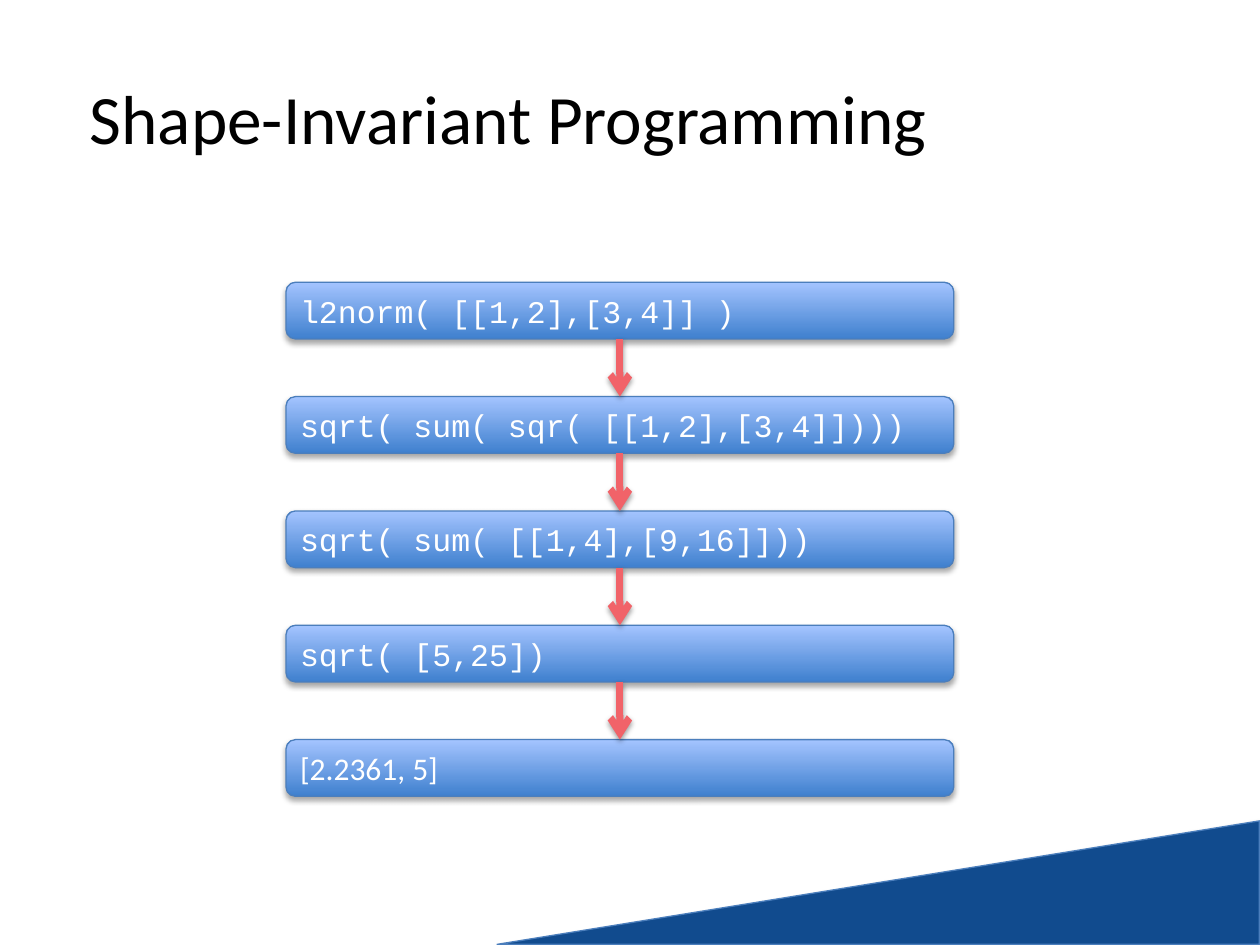
"""Build a slide tracing a shape-invariant evaluation step by step."""
from dataclasses import dataclass

import pptx
import pptx.util
import pptx.dml.color
import pptx.enum.dml
import pptx.enum.shapes
import pptx.enum.text
import pptx.oxml
import pptx.oxml.ns
from pptx.util import Inches

RGB = pptx.dml.color.RGBColor.from_string
SHAPE = pptx.enum.shapes.MSO_SHAPE


@dataclass(frozen=True)
class Theme:
    """Colours, fonts and sizes in points."""
    title: str = "000000"
    wedge: str = "114B8E"
    outline: str = "4B7EBC"
    step_bottom: str = "3F80CE"
    step_top: str = "A4C4FF"
    step_text: str = "FFFFFF"
    arrow: str = "F16369"
    shadow: str = "000000"
    body_font: str = "Calibri"
    code_font: str = "Courier New"
    title_size: float = 39.6
    step_size: float = 18
    outline_width: float = 0.75
    arrow_width: float = 4


THEME = Theme()


@dataclass(frozen=True)
class Step:
    """One expression in the evaluation chain."""
    expression: str
    font: str = THEME.code_font


STEPS = [
    Step("l2norm( [[1,2],[3,4]] )"),
    Step("sqrt( sum( sqr( [[1,2],[3,4]])))"),
    Step("sqrt( sum( [[1,4],[9,16]]))"),
    Step("sqrt( [5,25])"),
    Step("[2.2361, 5]", THEME.body_font),
]
STEP_LEFT, STEP_WIDTH, STEP_HEIGHT = 2.27, 5.3, 0.45
FIRST_TOP, LAST_TOP = 2.24, 5.87
PITCH = (LAST_TOP - FIRST_TOP) / (len(STEPS) - 1)


def add_shadow(target, opacity: int, distance: float) -> None:
    """Give a shape or connector a soft shadow falling straight down."""
    blur, offset = pptx.util.Pt(3.1), pptx.util.Pt(distance)
    target.element.spPr.append(pptx.oxml.parse_xml(
        f'<a:effectLst {pptx.oxml.ns.nsdecls("a")}>'
        f'<a:outerShdw blurRad="{blur}" dist="{offset}" dir="5400000" rotWithShape="0">'
        f'<a:srgbClr val="{THEME.shadow}"><a:alpha val="{opacity * 1000}"/></a:srgbClr>'
        '</a:outerShdw></a:effectLst>'))


def set_line(target, colour: str, width: float) -> None:
    """Set line colour and width."""
    target.line.color.rgb = RGB(colour)
    target.line.width = pptx.util.Pt(width)


def add_text(paragraph, text: str, font: str, size: float, colour: str) -> None:
    """Add one formatted run."""
    run = paragraph.add_run()
    run.text = text
    run.font.name = font
    run.font.size = pptx.util.Pt(size)
    run.font.color.rgb = RGB(colour)


def add_wedge(slide) -> None:
    """Draw the corner wedge."""
    wedge = slide.shapes.add_shape(
        SHAPE.RIGHT_TRIANGLE, Inches(6.48), Inches(3.98), Inches(0.98), Inches(6.05))
    wedge.rotation = 270
    wedge.fill.solid()
    wedge.fill.fore_color.rgb = RGB(THEME.wedge)
    set_line(wedge, THEME.outline, THEME.outline_width)
    add_shadow(wedge, 35, 1.8)


def set_title(slide, text: str) -> None:
    """Place and fill the title."""
    title = slide.shapes.title
    title.left, title.top = Inches(0.5), Inches(0.3)
    title.width, title.height = Inches(7.07), Inches(1.25)
    frame = title.text_frame
    frame.auto_size = pptx.enum.text.MSO_AUTO_SIZE.NONE
    frame.vertical_anchor = pptx.enum.text.MSO_ANCHOR.MIDDLE
    frame.paragraphs[0].alignment = pptx.enum.text.PP_ALIGN.CENTER
    add_text(frame.paragraphs[0], text, THEME.body_font, THEME.title_size, THEME.title)


def add_step(slide, step: Step, top: float):
    """Draw one expression box and return it."""
    box = slide.shapes.add_shape(
        SHAPE.ROUNDED_RECTANGLE, Inches(STEP_LEFT), Inches(top),
        Inches(STEP_WIDTH), Inches(STEP_HEIGHT))
    box.fill.gradient()
    box.fill.gradient_angle = 90
    for stop, colour in zip(box.fill.gradient_stops, (THEME.step_bottom, THEME.step_top)):
        stop.color.rgb = RGB(colour)
    set_line(box, THEME.outline, THEME.outline_width)
    add_shadow(box, 35, 1.8)
    frame = box.text_frame
    frame.word_wrap = True
    frame.vertical_anchor = pptx.enum.text.MSO_ANCHOR.MIDDLE
    frame.margin_left = frame.margin_right = Inches(0.09)
    frame.margin_top = frame.margin_bottom = Inches(0.04)
    frame.paragraphs[0].alignment = pptx.enum.text.PP_ALIGN.LEFT
    add_text(frame.paragraphs[0], step.expression, step.font, THEME.step_size, THEME.step_text)
    return box


def add_arrow(slide, upper, lower) -> None:
    """Join the bottom of one box to the top of the next."""
    arrow = slide.shapes.add_connector(pptx.enum.shapes.MSO_CONNECTOR.STRAIGHT, 0, 0, 0, 0)
    arrow.begin_connect(upper, 2)
    arrow.end_connect(lower, 0)
    set_line(arrow, THEME.arrow, THEME.arrow_width)
    arrow.element.spPr.find(pptx.oxml.ns.qn("a:ln")).append(
        pptx.oxml.parse_xml(f'<a:tailEnd {pptx.oxml.ns.nsdecls("a")} type="arrow"/>'))
    add_shadow(arrow, 38, 1.6)


def main() -> None:
    """Build and save the slide."""
    deck = pptx.Presentation()
    deck.slide_width, deck.slide_height = Inches(10), Inches(7.5)
    slide = deck.slides.add_slide(deck.slide_layouts.get_by_name("Title Only"))
    add_wedge(slide)
    set_title(slide, "Shape-Invariant Programming")
    boxes = [add_step(slide, step, FIRST_TOP + row * PITCH) for row, step in enumerate(STEPS)]
    for upper, lower in zip(boxes, boxes[1:]):
        add_arrow(slide, upper, lower)
    deck.save("out.pptx")


if __name__ == "__main__":
    main()
